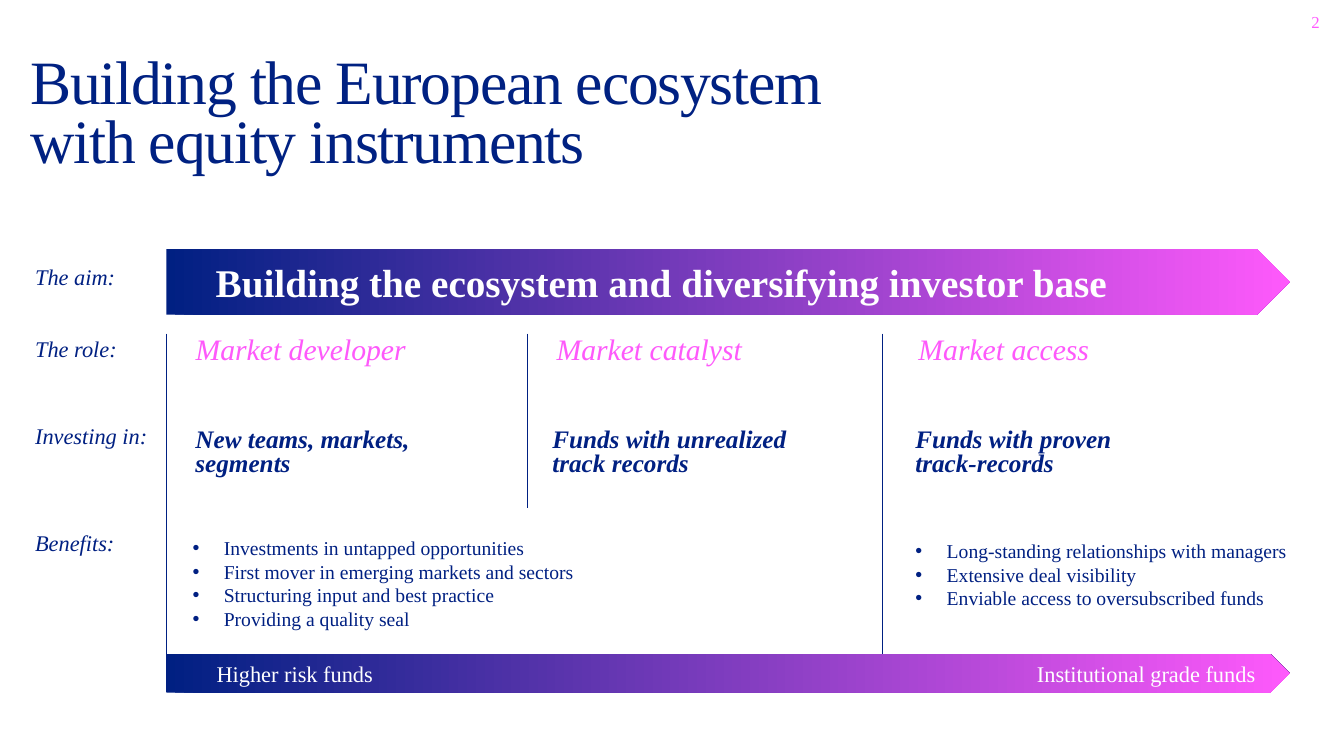
from lxml.etree import SubElement
from pptx import Presentation
from pptx.dml.color import RGBColor
from pptx.enum.shapes import MSO_CONNECTOR, MSO_SHAPE
from pptx.enum.text import MSO_ANCHOR, MSO_AUTO_SIZE, PP_ALIGN
from pptx.oxml.ns import qn
from pptx.util import Pt

PX = 9144  # 100 px to the inch
FONT = "Times New Roman"
NAVY, PINK, WHITE = "002082", "FE59FB", "FFFFFF"


def px(*sizes):
    return [size * PX for size in sizes]


def rgb(code):
    return RGBColor.from_string(code)


def write(frame, text, size=16, color=NAVY, bold=False, italic=False,
          align=PP_ALIGN.LEFT, anchor=MSO_ANCHOR.TOP, pad=(10, 5, 10, 5),
          lead=1.0, track=0, bullet=False):
    """Fill a text frame with one paragraph for each line of text."""
    frame.word_wrap = True
    frame.auto_size = MSO_AUTO_SIZE.NONE
    frame.vertical_anchor = anchor
    (frame.margin_left, frame.margin_top,
     frame.margin_right, frame.margin_bottom) = px(*pad)
    for i, line in enumerate(text.split("\n")):
        para = frame.add_paragraph() if i else frame.paragraphs[0]
        para.alignment = align
        para.line_spacing = lead
        para.space_before = para.space_after = Pt(0)
        if bullet:
            props = para._p.get_or_add_pPr()
            props.set("marL", str(31 * PX))
            props.set("indent", str(-31 * PX))
            SubElement(props, qn("a:buFont"), typeface="Arial")
            SubElement(props, qn("a:buChar"), char="•")
        run = para.add_run()
        run.text = line
        font = run.font
        font.name, font.size = FONT, Pt(size)
        font.bold, font.italic = bold, italic
        font.color.rgb = rgb(color)
        if track:
            run._r.get_or_add_rPr().set("spc", str(track))


def label(slide, box, text, **style):
    write(slide.shapes.add_textbox(*px(*box)).text_frame, text, **style)


def place(holder, box, text, **style):
    """Move a placeholder and fill it."""
    holder.left, holder.top, holder.width, holder.height = px(*box)
    write(holder.text_frame, text, **style)


def rule(slide, x, top, end):
    """Draw a thin upright line."""
    line = slide.shapes.add_connector(MSO_CONNECTOR.STRAIGHT, *px(x, top, x, end))
    line.line.color.rgb = rgb(NAVY)
    line.line.width = Pt(0.5)
    SubElement(line._element.spPr, qn("a:effectLst"))


def arrow(slide, top, height):
    """Draw a banner that fades from navy to pink."""
    shape = slide.shapes.add_shape(MSO_SHAPE.PENTAGON, *px(165, top, 1114, height))
    shape.shadow.inherit = False
    shape.line.fill.background()
    shape.fill.gradient()
    shape.fill.gradient_angle = 0
    for stop, color in zip(shape.fill.gradient_stops, (NAVY, PINK)):
        stop.color.rgb = rgb(color)
    return shape


def main():
    deck = Presentation()
    deck.slide_width, deck.slide_height = px(1333, 750)
    slide = deck.slides.add_slide(deck.slide_layouts[3])
    title, early, late = slide.placeholders

    place(title, (30, 40, 802, 136),
          "Building the European ecosystem\nwith equity instruments",
          size=44, color="002182", pad=(0, 17, 0, 0), lead=0.8, track=-90)
    label(slide, (1263, 11, 46, 22), "2", size=12, color="FF59FF",
          align=PP_ALIGN.RIGHT, pad=(0, 1, 0, 0), track=50)

    for x, end in (165, 687), (523, 504), (875, 687):
        rule(slide, x, 331, end)

    for top, text in ((256, "The aim:"), (328, "The role:"),
                      (414, "Investing in:"), (520, "Benefits:")):
        label(slide, (25, top, 140, 37), text, italic=True)

    stages = (
        (194, 184, "Market developer", "New teams, markets,\nsegments"),
        (552, 538, "Market catalyst", "Funds with unrealized\ntrack records"),
        (911, 898, "Market access", "Funds with proven\ntrack-records"),
    )
    for left, inner, role, target in stages:
        label(slide, (left, 334, 280, 34), role, size=21.2, color=PINK,
              italic=True, pad=(0, 0, 0, 0), lead=Pt(21.2))
        label(slide, (inner, 421, 293, 59), target.replace("\n", " ")
              if inner < 0 else target, size=18, bold=True, italic=True, lead=0.8)

    place(early, (181, 527, 540, 110),
          "Investments in untapped opportunities\n"
          "First mover in emerging markets and sectors\n"
          "Structuring input and best practice\n"
          "Providing a quality seal", size=14, bullet=True)
    place(late, (898, 530, 400, 81),
          "Long-standing relationships with managers\n"
          "Extensive deal visibility\n"
          "Enviable access to oversubscribed funds", size=14, bullet=True)

    arrow(slide, 649, 38)
    label(slide, (205, 650, 200, 37), "Higher risk funds", color=WHITE)
    label(slide, (1007, 650, 248, 37), "Institutional grade funds",
          color=WHITE, align=PP_ALIGN.RIGHT)
    aim = arrow(slide, 247, 65)
    write(aim.text_frame, "Building the ecosystem and diversifying investor base",
          size=28, color=WHITE, bold=True, anchor=MSO_ANCHOR.MIDDLE,
          pad=(49, 5, 10, 5))

    deck.save("out.pptx")


if __name__ == "__main__":
    main()
